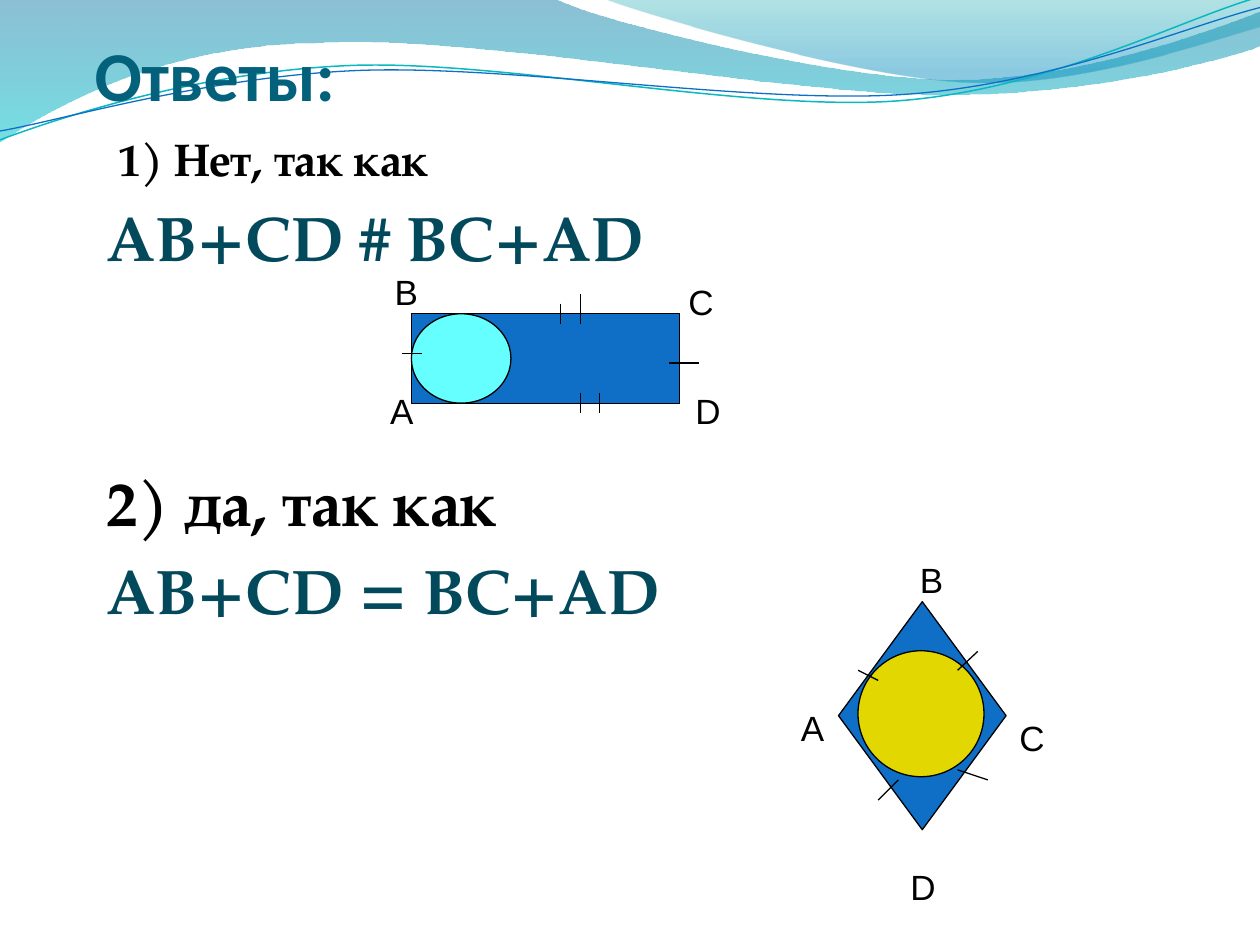
from dataclasses import dataclass
from math import cos, radians, sin
from typing import Any, NamedTuple

from lxml.etree import Element, SubElement
from pptx import Presentation
from pptx.dml.color import RGBColor
from pptx.enum.shapes import MSO_CONNECTOR, MSO_SHAPE
from pptx.enum.text import MSO_ANCHOR, PP_ALIGN
from pptx.oxml.ns import qn
from pptx.util import Inches, Pt

COLUMNS, ROWS = 100, 75
WIDTH, HEIGHT = Inches(10), Inches(7.5)

BLACK = RGBColor(0x00, 0x00, 0x00)
BLUE = RGBColor(0x0F, 0x6F, 0xC6)
AQUA = RGBColor(0x66, 0xFF, 0xFF)
YELLOW = RGBColor(0xE2, 0xD7, 0x00)
TEAL = RGBColor(0x0A, 0xB8, 0xBF)
TITLE_COLOR = RGBColor(0x04, 0x61, 0x7B)
FORMULA_COLOR = RGBColor(0x03, 0x49, 0x5C)
WAVE_TOP = RGBColor(0x00, 0x74, 0xA1)
WAVE_BOTTOM = RGBColor(0x00, 0xC6, 0xCF)
CREST_TOP = RGBColor(0x00, 0xA1, 0xA9)
CREST_BOTTOM = RGBColor(0x00, 0x8B, 0xBF)

TILT = -2.7
TILT_CENTER = (49.9, 5.8)

Point = tuple[float, float]


class Box(NamedTuple):
    column: float
    row: float
    columns: float
    rows: float


class Stop(NamedTuple):
    position: float
    color: RGBColor
    opacity: int


@dataclass(frozen=True)
class Wave:
    segments: list[list[Point]]
    stops: tuple[Stop, ...] = ()
    line: RGBColor | None = None
    weight: float = 0


@dataclass(frozen=True)
class Figure:
    kind: MSO_SHAPE
    box: Box
    color: RGBColor


@dataclass(frozen=True)
class Line:
    text: str
    size: float
    color: RGBColor
    space: float


class Label(NamedTuple):
    text: str
    center: float
    row: float


class Tick(NamedTuple):
    start: Point
    end: Point


WAVES = [
    Wave([[(0, -0.1)], [(44, -0.1)], [(47.6, 1.7), (66.4, 6.3), (75.8, 6.3)],
          [(85.3, 6.3), (95.8, 2.6), (100, 0.9)], [(100.1, 3.6)],
          [(98.3, 4.4), (87, 7.6), (74.6, 7.5)], [(62.2, 7.5), (38.2, 2.8), (25.7, 3.4)],
          [(12.9, 3.5), (4.6, 8.3), (-0.1, 11.3)], [(0, -0.1)]],
         (Stop(0, WAVE_TOP, 45), Stop(1, WAVE_BOTTOM, 55))),
    Wave([[(47.9, -0.1)], [(50.9, 1.1), (68.2, 6.2), (76.9, 6.5)],
          [(85.6, 6.9), (96.1, 3.2), (100, 2.1)], [(100, 0)]],
         (Stop(0, CREST_TOP, 30), Stop(0.8, CREST_BOTTOM, 45))),
    Wave([[(0, 11.1)], [(4.8, 9.3), (15.8, 5.7), (27.7, 5.2)],
          [(39.5, 4.7), (59.3, 8.9), (71.3, 8)], [(83.3, 7.1), (93.8, 1.5), (99.8, -0.2)]],
         line=TEAL, weight=0.85),
    Wave([[(0, 10.4)], [(4.7, 9.6), (16.4, 6.1), (28.3, 5.6)],
          [(40.3, 5.1), (59.7, 8.3), (71.7, 7.5)], [(83.6, 6.7), (94.1, 2.1), (100, 0.6)]],
         line=BLUE, weight=0.75),
]

TITLE = [Line("Ответы:", 40, TITLE_COLOR, 0)]
ANSWERS = [
    Line(" 1) Нет, так как", 26, BLACK, 5.2),
    Line("AB+CD # BC+AD", 36, FORMULA_COLOR, 7.2),
    Line("2) да, так как", 36, BLACK, 108.6),
    Line("AB+CD = BC+AD", 36, FORMULA_COLOR, 7.2),
]

FIGURES = [
    Figure(MSO_SHAPE.RECTANGLE, Box(32.65, 24.9, 21.3, 7.1), BLUE),
    Figure(MSO_SHAPE.OVAL, Box(32.65, 24.9, 7.9, 7.1), AQUA),
    Figure(MSO_SHAPE.DIAMOND, Box(66.55, 47.75, 13.3, 18.1), BLUE),
    Figure(MSO_SHAPE.OVAL, Box(68.1, 51.65, 10, 10), YELLOW),
]

LABELS = [
    Label("А", 31.9, 30.4), Label("В", 32.25, 21),
    Label("С", 55.65, 21.8), Label("D", 56.2, 30.4),
    Label("А", 64.5, 55.6), Label("В", 73.95, 43.8),
    Label("С", 81.9, 56.4), Label("D", 73.25, 68.2),
]

TICKS = [
    Tick((44.5, 24.1), (44.5, 25.7)), Tick((46.1, 23.3), (46.1, 25.7)),
    Tick((46.1, 31.2), (46.1, 32.8)), Tick((47.6, 31.2), (47.6, 32.8)),
    Tick((53.1, 28.8), (55.5, 28.8)), Tick((31.9, 28.05), (33.5, 28.05)),
    Tick((68.1, 53.2), (69.7, 54)), Tick((76, 53.2), (77.6, 51.7)),
    Tick((76, 61.1), (78.4, 61.9)), Tick((71.3, 61.9), (69.7, 63.5)),
]


def apply(target: Any, values: dict[str, Any]) -> None:
    for name, value in values.items():
        setattr(target, name, value)


def place(point: Point) -> tuple[int, int]:
    return round(point[0] * WIDTH / COLUMNS), round(point[1] * HEIGHT / ROWS)


def frame(box: Box) -> tuple[int, int, int, int]:
    return *place((box.column, box.row)), *place((box.columns, box.rows))


def level(point: Point) -> Point:
    angle = radians(-TILT)
    across, down = point[0] - TILT_CENTER[0], point[1] - TILT_CENTER[1]
    return (TILT_CENTER[0] + across * cos(angle) - down * sin(angle),
            TILT_CENTER[1] + across * sin(angle) + down * cos(angle))


def bend(shape: Any, segments: list[list[Point]]) -> None:
    outline = next(shape._element.iter(qn("a:path")))
    corners = iter(outline.findall(qn("a:lnTo")))
    for segment in segments[1:]:
        parts = [next(corners) for _ in segment]
        if len(parts) == 3:
            curve = Element(qn("a:cubicBezTo"))
            parts[0].addprevious(curve)
            for part in parts:
                curve.append(part[0])
                outline.remove(part)


def draw_wave(slide: Any, wave: Wave) -> None:
    points = [point for segment in wave.segments for point in segment]
    first, *rest = map(place, points if wave.stops else map(level, points))
    builder = slide.shapes.build_freeform(*first)
    builder.add_line_segments(rest, close=bool(wave.stops))
    shape = builder.convert_to_shape()
    bend(shape, wave.segments)
    shape.shadow.inherit = False
    if wave.stops:
        shape.line.fill.background()
        shape.fill.gradient()
        shape.fill.gradient_angle = 270
        for target, stop in zip(shape.fill.gradient_stops, wave.stops):
            target.position = stop.position
            target.color.rgb = stop.color
        for color, stop in zip(shape._element.iter(qn("a:srgbClr")), wave.stops):
            SubElement(color, qn("a:alpha"), val=str(stop.opacity * 1000))
    else:
        shape.rotation = TILT
        shape.fill.background()
        shape.line.color.rgb = wave.line
        shape.line.width = Pt(wave.weight)


def draw_figure(slide: Any, figure: Figure) -> None:
    shape = slide.shapes.add_shape(figure.kind, *frame(figure.box))
    shape.shadow.inherit = False
    shape.fill.solid()
    shape.fill.fore_color.rgb = figure.color
    shape.line.color.rgb = BLACK
    shape.line.width = Pt(0.75)


def draw_text(slide: Any, box: Box, lines: list[Line], font: dict[str, Any],
              layout: dict[str, Any], align: PP_ALIGN = PP_ALIGN.LEFT) -> None:
    text_frame = slide.shapes.add_textbox(*frame(box)).text_frame
    apply(text_frame, {"word_wrap": True, **layout})
    for index, line in enumerate(lines):
        paragraph = text_frame.add_paragraph() if index else text_frame.paragraphs[0]
        apply(paragraph, {"alignment": align, "space_before": Pt(line.space)})
        run = paragraph.add_run()
        run.text = line.text
        apply(run.font, {"size": Pt(line.size), **font})
        run.font.color.rgb = line.color


def draw_tick(slide: Any, tick: Tick) -> None:
    connector = slide.shapes.add_connector(
        MSO_CONNECTOR.STRAIGHT, *place(tick.start), *place(tick.end))
    connector.line.color.rgb = BLACK
    connector.line.width = Pt(0.75)
    SubElement(connector._element.spPr, qn("a:effectLst"))


def main() -> None:
    presentation = Presentation()
    apply(presentation, {"slide_width": WIDTH, "slide_height": HEIGHT})
    slide = presentation.slides.add_slide(presentation.slide_layouts[6])
    for wave in WAVES:
        draw_wave(slide, wave)
    draw_text(slide, Box(7.5, 1.7, 75.1, 7.5), TITLE, {"name": "Calibri", "bold": True},
              {"vertical_anchor": MSO_ANCHOR.BOTTOM, "margin_left": 0,
               "margin_right": 0, "margin_bottom": 0})
    draw_text(slide, Box(7.5, 9.9, 84.2, 59.9), ANSWERS,
              {"name": "TeX Gyre Pagella", "bold": True}, {})
    for figure in FIGURES:
        draw_figure(slide, figure)
    for label in LABELS:
        draw_text(slide, Box(label.center - 2.5, label.row, 5, 4.3),
                  [Line(label.text, 20, BLACK, 0)], {"name": "Arial"}, {}, PP_ALIGN.CENTER)
    for tick in TICKS:
        draw_tick(slide, tick)
    presentation.save("out.pptx")


if __name__ == "__main__":
    main()
